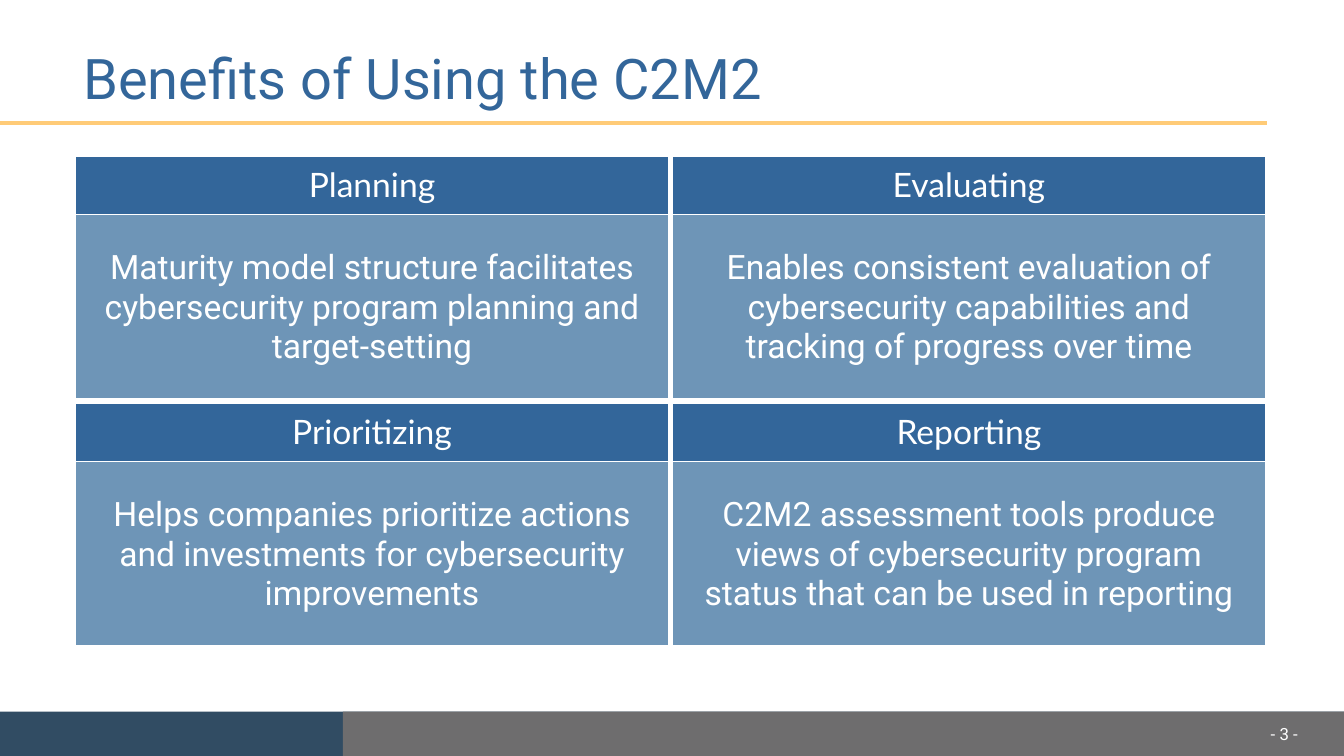
import lxml.etree
import pptx
import pptx.dml.color
import pptx.enum.shapes
import pptx.enum.text
import pptx.oxml.ns
import pptx.util

Inches = pptx.util.Inches
Pt = pptx.util.Pt
qn = pptx.oxml.ns.qn
ALIGN = pptx.enum.text.PP_ALIGN
MIDDLE = pptx.enum.text.MSO_ANCHOR.MIDDLE

COLORS = {
    "blue": "33669A",
    "light_blue": "6E95B7",
    "navy": "314C63",
    "gray": "6E6D6E",
    "gold": "FFCB77",
    "white": "FFFFFF",
}
BENEFITS = [
    [
        ("Planning", "Maturity model structure facilitates cybersecurity program planning and target-setting"),
        ("Evaluating", "Enables consistent evaluation of cybersecurity capabilities and "
                       "tracking of progress over time"),
    ],
    [
        ("Prioritizing", "Helps companies prioritize actions and investments for cybersecurity improvements"),
        ("Reporting", "C2M2 assessment tools produce views of cybersecurity program "
                      "status that can be used in reporting"),
    ],
]
SLIDE_WIDTH, SLIDE_HEIGHT = 13.33, 7.5
FOOTER_TOP, FOOTER_HEIGHT = 7.06, 0.44
LEFT, CONTENT_WIDTH = 0.73, 11.84
HEADING_HEIGHT, DETAIL_HEIGHT = 0.6, 1.85
THICK, THIN = 4.5, 1


class SlideBuilder:
    def __init__(self, slide):
        self.slide = slide
        self.body_font = "Roboto"
        self.heading_font = "Lato"

    def rgb(self, color):
        return pptx.dml.color.RGBColor.from_string(COLORS[color])

    def set_text(self, frame, text, size, color, align, font):
        frame.word_wrap = True
        frame.text = text
        paragraph = frame.paragraphs[0]
        paragraph.alignment = align
        style = paragraph.runs[0].font
        style.size, style.name = Pt(size), font
        style.color.rgb = self.rgb(color)
        return paragraph

    def band(self, left, top, width, height, color):
        band = self.slide.shapes.add_shape(
            pptx.enum.shapes.MSO_SHAPE.RECTANGLE,
            Inches(left), Inches(top), Inches(width), Inches(height))
        band.shadow.inherit = False
        band.fill.solid()
        band.fill.fore_color.rgb = self.rgb(color)
        band.line.fill.background()

    def rule(self, left, right, y, color, weight):
        rule = self.slide.shapes.add_connector(
            pptx.enum.shapes.MSO_CONNECTOR.STRAIGHT,
            Inches(left), Inches(y), Inches(right), Inches(y))
        rule.line.color.rgb = self.rgb(color)
        rule.line.width = Pt(weight)
        lxml.etree.SubElement(rule._element.spPr, qn("a:effectLst"))

    def text(self, left, top, width, height, text, size, color, align=ALIGN.LEFT):
        box = self.slide.shapes.add_textbox(Inches(left), Inches(top), Inches(width), Inches(height))
        box.text_frame.vertical_anchor = MIDDLE
        return self.set_text(box.text_frame, text, size, color, align, self.body_font)

    def borders(self, cell, top, bottom):
        """Draw white cell borders; side borders are always thick."""
        properties = cell._tc.get_or_add_tcPr()
        for side, weight in (("L", THICK), ("R", THICK), ("T", top), ("B", bottom)):
            line = lxml.etree.SubElement(properties, qn(f"a:ln{side}"), w=str(Pt(weight)))
            fill = lxml.etree.SubElement(line, qn("a:solidFill"))
            lxml.etree.SubElement(fill, qn("a:srgbClr"), val=COLORS["white"])

    def cell(self, cell, text, color, font, top, bottom):
        self.borders(cell, top, bottom)
        cell.fill.solid()
        cell.fill.fore_color.rgb = self.rgb(color)
        cell.vertical_anchor = MIDDLE
        cell.margin_left = cell.margin_right = Inches(0.2)
        cell.margin_top = cell.margin_bottom = Inches(0.05)
        self.set_text(cell.text_frame, text, 24, "white", ALIGN.CENTER, font)

    def benefit_table(self, left, top, width, benefits):
        """Lay out each row of benefits as a heading row above a detail row."""
        pair_height = HEADING_HEIGHT + DETAIL_HEIGHT
        table = self.slide.shapes.add_table(
            2 * len(benefits), len(benefits[0]), Inches(left), Inches(top),
            Inches(width), Inches(pair_height * len(benefits))).table
        table.first_row = table.horz_banding = False
        for pair, row in enumerate(benefits):
            heading_row, detail_row = 2 * pair, 2 * pair + 1
            table.rows[heading_row].height = Inches(HEADING_HEIGHT)
            table.rows[detail_row].height = Inches(DETAIL_HEIGHT)
            for column, (heading, detail) in enumerate(row):
                self.cell(table.cell(heading_row, column), heading, "blue",
                          self.heading_font, THICK, THIN)
                self.cell(table.cell(detail_row, column), detail, "light_blue",
                          self.body_font, THIN, THICK)


def main():
    deck = pptx.Presentation()
    deck.slide_width, deck.slide_height = Inches(SLIDE_WIDTH), Inches(SLIDE_HEIGHT)
    builder = SlideBuilder(deck.slides.add_slide(deck.slide_layouts[6]))

    builder.band(0, FOOTER_TOP, SLIDE_WIDTH, FOOTER_HEIGHT, "navy")
    builder.band(3.4, FOOTER_TOP, SLIDE_WIDTH - 3.4, FOOTER_HEIGHT, "gray")
    builder.rule(0, LEFT + CONTENT_WIDTH, 1.22, "gold", 3)
    title = builder.text(LEFT, 0.44, CONTENT_WIDTH, 0.74, "Benefits of Using the C2M2", 40, "blue")
    title.line_spacing = 0.9
    builder.benefit_table(LEFT, 1.53, CONTENT_WIDTH, BENEFITS)
    builder.text(11.57, 7.08, 1.4, 0.4, "- 3 -", 12, "white", ALIGN.RIGHT)

    deck.save("out.pptx")


if __name__ == "__main__":
    main()
